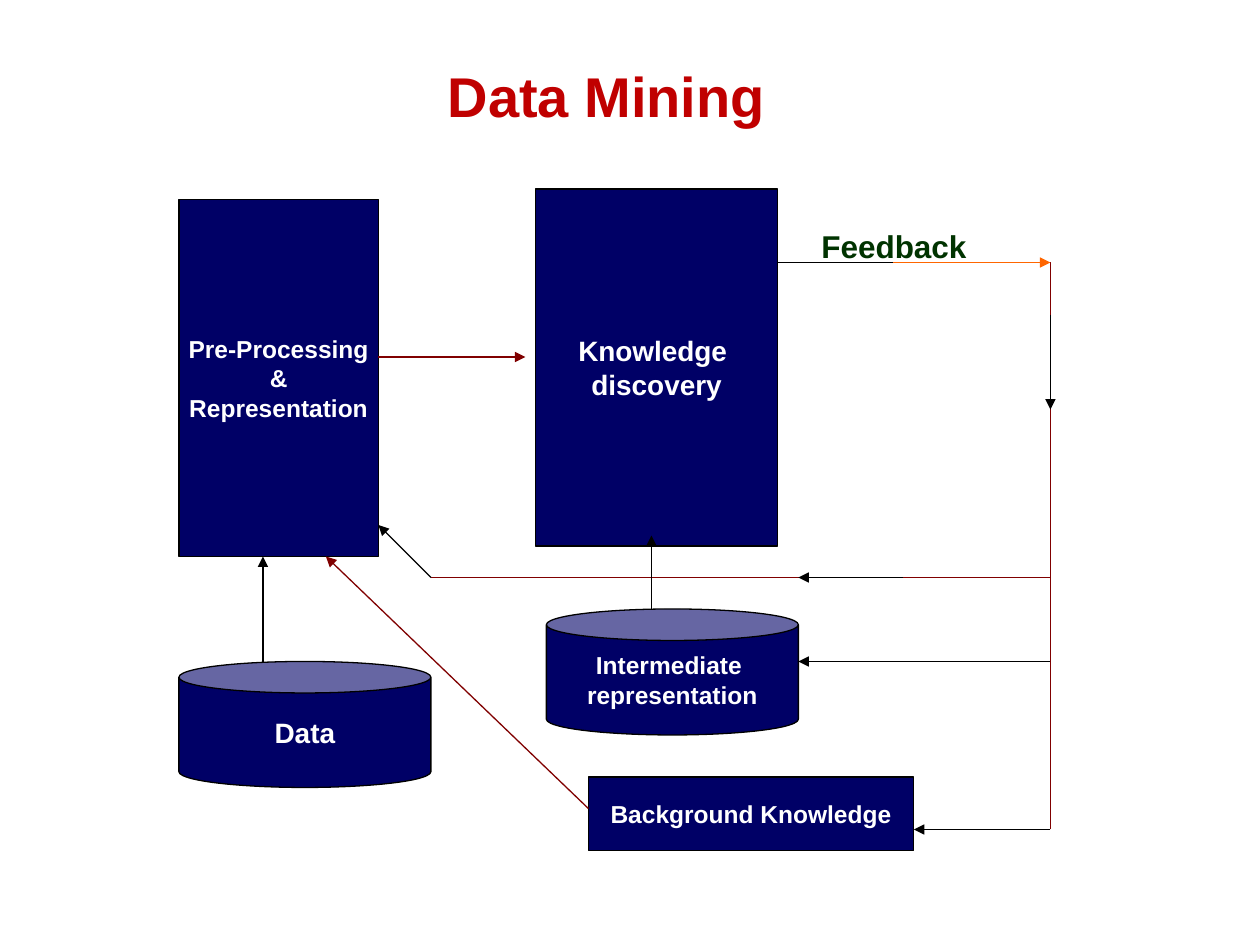
from lxml import etree
from pptx import Presentation
from pptx.dml.color import RGBColor
from pptx.enum.shapes import MSO_CONNECTOR, MSO_SHAPE
from pptx.enum.text import MSO_ANCHOR, PP_ALIGN
from pptx.oxml.ns import qn
from pptx.util import Inches, Pt

RECT, CAN = MSO_SHAPE.RECTANGLE, MSO_SHAPE.CAN
LINE = MSO_CONNECTOR.STRAIGHT
MIDDLE, TOP = MSO_ANCHOR.MIDDLE, MSO_ANCHOR.TOP
LEFT, CENTER = PP_ALIGN.LEFT, PP_ALIGN.CENTER

COLORS = {
    "title": "C00000", "navy": "000066", "black": "000000", "white": "FFFFFF",
    "maroon": "800000", "orange": "FF6600", "green": "003300",
}

CELL = 1 / 12
RAIL = 83

NODES = [
    (CAN, (35, 40, 24, 12), 14, ["Intermediate ", "representation"]),
    (CAN, (0, 45, 24, 12), 16, ["Data"]),
    (RECT, (39, 56, 31, 7), 14, ["Background Knowledge"]),
    (RECT, (0, 1, 19, 34), 14, ["Pre-Processing", "&", "Representation"]),
    (RECT, (34, 0, 23, 34), 16, ["Knowledge ", "discovery"]),
]

LINKS = [
    ((19, 16), (33, 16), "maroon", True),
    ((8, 45), (8, 35), "black", True),
    ((39, 59), (14, 35), "maroon", True),
    ((RAIL, 7), (RAIL, 61), "maroon", False),
    ((RAIL, 61), (70, 61), "black", True),
    ((RAIL, 45), (59, 45), "black", True),
    ((RAIL, 37), (24, 37), "maroon", False),
    ((24, 37), (19, 32), "black", True),
    ((RAIL, 12), (RAIL, 21), "black", True),
    ((68, 7), (RAIL, 7), "orange", True),
    ((69, 37), (59, 37), "black", True),
    ((45, 40), (45, 33), "black", True),
]


def color(name):
    return RGBColor.from_string(COLORS[name])


def write(frame, lines, size, tint, align=CENTER, anchor=MIDDLE, wrap=True):
    frame.word_wrap = wrap
    frame.vertical_anchor = anchor
    for i, line in enumerate(lines):
        para = frame.paragraphs[0] if i == 0 else frame.add_paragraph()
        para.alignment = align
        run = para.add_run()
        run.text = line
        run.font.name = "Arial"
        run.font.size = Pt(size)
        run.font.bold = True
        run.font.color.rgb = color(tint)


def label(slide, box, text, size, tint, align=CENTER, anchor=MIDDLE):
    area = slide.shapes.add_textbox(*map(Inches, box))
    write(area.text_frame, [text], size, tint, align, anchor)


def place(box, x, y):
    return Inches(box[0] + x * CELL), Inches(box[1] + y * CELL)


def node(slide, box, kind, area, size, lines):
    x, y, wide, high = area
    shape = slide.shapes.add_shape(
        kind, *place(box, x, y), Inches(wide * CELL), Inches(high * CELL))
    shape.shadow.inherit = False
    if kind == CAN:
        shape.adjustments[0] = 0.25
    shape.fill.solid()
    shape.fill.fore_color.rgb = color("navy")
    shape.line.color.rgb = color("black")
    shape.line.width = Pt(0.75)
    write(shape.text_frame, lines, size, "white", wrap=False)


def link(slide, box, start, end, tint, arrow):
    wire = slide.shapes.add_connector(LINE, *place(box, *start), *place(box, *end))
    wire.line.color.rgb = color(tint)
    wire.line.width = Pt(0.75)
    if arrow:
        tail = etree.SubElement(wire.line._get_or_add_ln(), qn("a:tailEnd"))
        tail.set("type", "triangle")
    etree.SubElement(wire._element.spPr, qn("a:effectLst"))


def diagram(slide, box):
    link(slide, box, (44, 7), (70, 7), "black", False)
    for item in NODES:
        node(slide, box, *item)
    area = (box[0] + 60 * CELL, box[1] + 3 * CELL, 22 * CELL, 0.4)
    label(slide, area, "Feedback", 18, "green", LEFT, TOP)
    for item in LINKS:
        link(slide, box, *item)


def main():
    deck = Presentation()
    deck.slide_width, deck.slide_height = Inches(10), Inches(7.5)
    slide = deck.slides.add_slide(deck.slide_layouts[6])
    label(slide, (0.75, 0.5, 8.25, 0.51), "Data Mining ", 32, "title")
    diagram(slide, (1.42, 1.5))
    deck.save("out.pptx")


if __name__ == "__main__":
    main()
